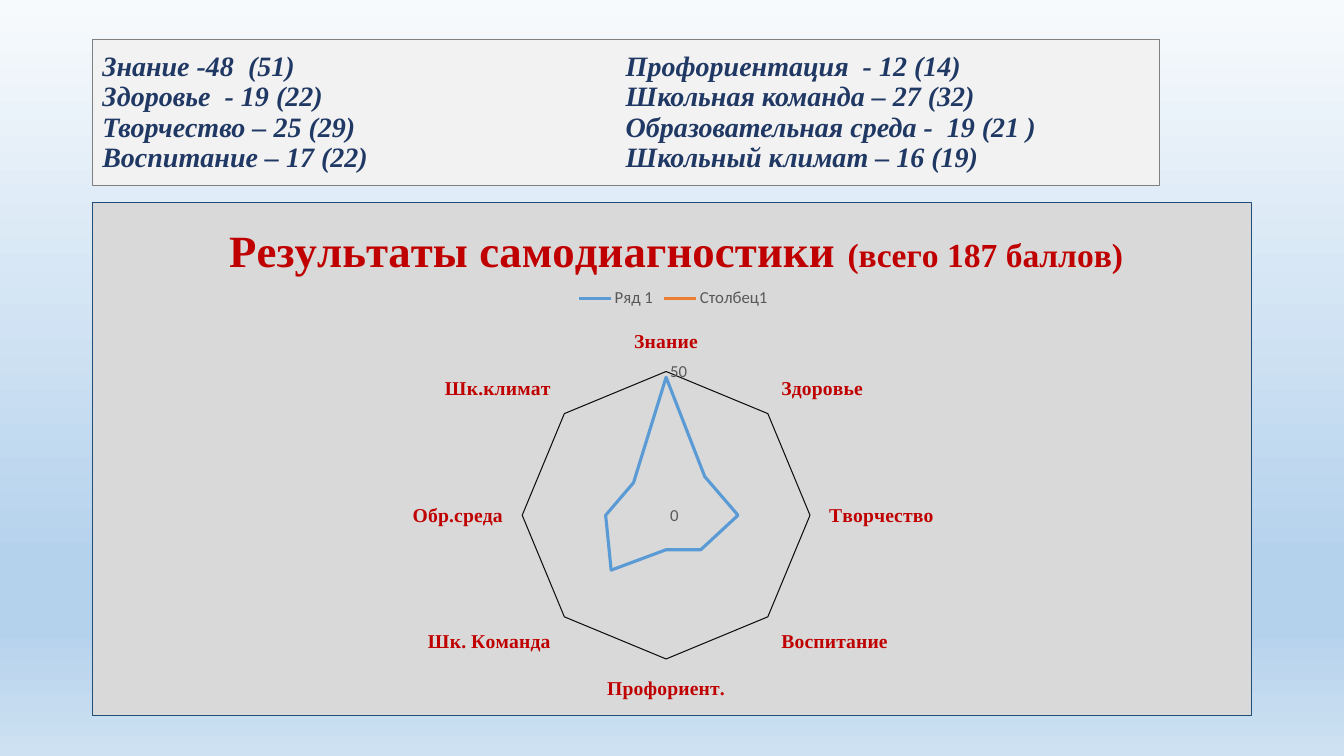
from dataclasses import dataclass

from lxml.etree import SubElement
from pptx import Presentation
from pptx.chart.data import CategoryChartData
from pptx.dml.color import RGBColor
from pptx.enum.chart import XL_CHART_TYPE, XL_LEGEND_POSITION, XL_TICK_MARK
from pptx.enum.shapes import MSO_SHAPE
from pptx.enum.text import MSO_ANCHOR, PP_ALIGN
from pptx.oxml import parse_xml
from pptx.oxml.ns import nsdecls, qn
from pptx.util import Pt

PX = 9525  # EMU per px, 96 px to the inch


@dataclass(frozen=True)
class Theme:
    serif: str = "Times New Roman"
    sans: str = "Calibri"
    navy: str = "203864"
    red: str = "C00000"
    grey: str = "595959"
    box_fill: str = "F2F2F2"
    box_line: str = "808080"
    chart_fill: str = "D9D9D9"
    chart_line: str = "1F4E79"
    axis: str = "D9D9D9"
    grid: str = "0D0D0D"
    series: tuple = ("5B9BD5", "ED7D31")
    sky: tuple = ((0, "F7FAFD"), (74, "B5D2EC"), (83, "B5D2EC"), (100, "CEE1F2"))
    title: int = 32
    subtitle: int = 24
    scores: int = 20
    category: int = 14
    small: int = 12
    base: int = 10


T = Theme()

SCORES = [
    "Знание -48  (51)", "Здоровье  - 19 (22)",
    "Творчество – 25 (29)", "Воспитание – 17 (22)",
    "Профориентация  - 12 (14)", "Школьная команда – 27 (32)",
    "Образовательная среда -  19 (21 )", "Школьный климат – 16 (19)",
]
RADAR = {
    "Знание": 48, "Здоровье": 19, "Творчество": 25, "Воспитание": 17,
    "Профориент.": 12, "Шк. Команда": 27, "Обр.среда": 21, "Шк.климат": 16,
}


def px(*lengths):
    return [n * PX for n in lengths]


def style_font(font, size, color, name, bold=False, italic=False):
    font.size, font.name, font.bold, font.italic = Pt(size), name, bold, italic
    font.color.rgb = RGBColor.from_string(color)


def add_text(p, text, **fmt):
    r = p.add_run()
    r.text = text
    style_font(r.font, **fmt)


def style_line(line, color, width=0.75):
    line.color.rgb = RGBColor.from_string(color)
    line.width = Pt(width)


def set_background(s):
    fill = s.background.fill
    fill.gradient()
    fill.gradient_angle = 270
    stops = s.element.find(".//" + qn("a:gsLst"))
    for stop in list(stops):
        stops.remove(stop)
    for pos, color in T.sky:
        gs = SubElement(stops, qn("a:gs"), pos=str(pos * 1000))
        SubElement(gs, qn("a:srgbClr"), val=color)


def add_score_box(s, lines, x, y, w, h):
    sp = s.shapes.add_shape(MSO_SHAPE.RECTANGLE, *px(x, y, w, h))
    sp.shadow.inherit = False
    sp.fill.solid()
    sp.fill.fore_color.rgb = RGBColor.from_string(T.box_fill)
    style_line(sp.line, T.box_line)
    tf = sp.text_frame
    tf.word_wrap = True
    tf.vertical_anchor = MSO_ANCHOR.MIDDLE
    sp.element.find(".//" + qn("a:bodyPr")).set("numCol", "2")
    p = tf.paragraphs[0]
    p.alignment = PP_ALIGN.LEFT
    p.line_spacing = 0.9
    for i, line in enumerate(lines):
        if i:
            p.add_line_break()
        add_text(p, line, size=T.scores, color=T.navy, name=T.serif,
                 bold=True, italic=True)


def place(part, inner=False, **fractions):
    """Fix a chart part at fractions of the chart area."""
    old = part.find(qn("c:layout"))
    if old is not None:
        part.remove(old)
    target = '<c:layoutTarget val="inner"/>' if inner else ""
    modes = "".join(f'<c:{k}Mode val="edge"/>' for k in "xy")
    values = "".join(f'<c:{k} val="{v}"/>' for k, v in fractions.items())
    layout = parse_xml(f'<c:layout {nsdecls("c")}><c:manualLayout>{target}{modes}'
                       f'{values}</c:manualLayout></c:layout>')
    overlay = part.find(qn("c:overlay"))
    if overlay is not None:
        overlay.addprevious(layout)
    else:
        part.insert(0, layout)


def style_axes(chart):
    cat, val = chart.category_axis, chart.value_axis
    for axis in (cat, val):
        axis.major_tick_mark = axis.minor_tick_mark = XL_TICK_MARK.NONE
    cat.has_major_gridlines = False
    style_line(cat.format.line, T.axis)
    style_font(cat.tick_labels.font, T.category, T.red, T.serif, bold=True)
    val.minimum_scale, val.maximum_scale, val.major_unit = 0, 50, 50
    val.has_major_gridlines = True
    style_line(val.major_gridlines.format.line, T.grid)
    val.format.line.fill.background()
    style_font(val.tick_labels.font, T.small, T.grey, T.sans)


def add_radar(s, x, y, w, h):
    data = CategoryChartData()
    data.categories = list(RADAR)
    data.add_series("Ряд 1", list(RADAR.values()))
    data.add_series("Столбец1", [None] * len(RADAR))
    chart = s.shapes.add_chart(XL_CHART_TYPE.RADAR, *px(x, y, w, h), data).chart
    style_font(chart.font, T.base, "000000", T.sans)

    # Chart area
    chart.element.find(qn("c:chart")).addnext(parse_xml(
        f'<c:spPr {nsdecls("c", "a")}>'
        f'<a:solidFill><a:srgbClr val="{T.chart_fill}"/></a:solidFill>'
        f'<a:ln w="{Pt(0.75)}"><a:solidFill><a:srgbClr val="{T.chart_line}"/>'
        '</a:solidFill></a:ln></c:spPr>'))

    # Title
    chart.has_title = True
    p = chart.chart_title.text_frame.paragraphs[0]
    heading = dict(color=T.red, name=T.serif, bold=True)
    add_text(p, "Результаты самодиагностики ", size=T.title, **heading)
    add_text(p, "(всего 187 баллов)", size=T.subtitle, **heading)
    place(chart.element.find(".//" + qn("c:title")), x=0.115, y=0.04)

    # Legend
    chart.has_legend = True
    legend = chart.legend
    legend.position = XL_LEGEND_POSITION.TOP
    legend.include_in_layout = False
    style_font(legend.font, T.small, T.grey, T.sans)
    place(chart.element.find(".//" + qn("c:legend")), x=0.415, y=0.16)

    # Axes and series
    style_axes(chart)
    plot = chart.plots[0]
    plot.vary_by_categories = False
    for series, color in zip(plot.series, T.series):
        series.smooth = False
        style_line(series.format.line, color, 2.25)
    place(chart.element.find(".//" + qn("c:plotArea")), inner=True,
          x=0.37, y=0.33, w=0.25, h=0.56)


def main():
    prs = Presentation()
    prs.slide_width, prs.slide_height = px(1280, 720)
    s = prs.slides.add_slide(prs.slide_layouts[6])
    set_background(s)
    add_score_box(s, SCORES, 88, 38, 1016, 139)
    add_radar(s, 88, 192, 1104, 490)
    prs.save("out.pptx")


if __name__ == "__main__":
    main()
